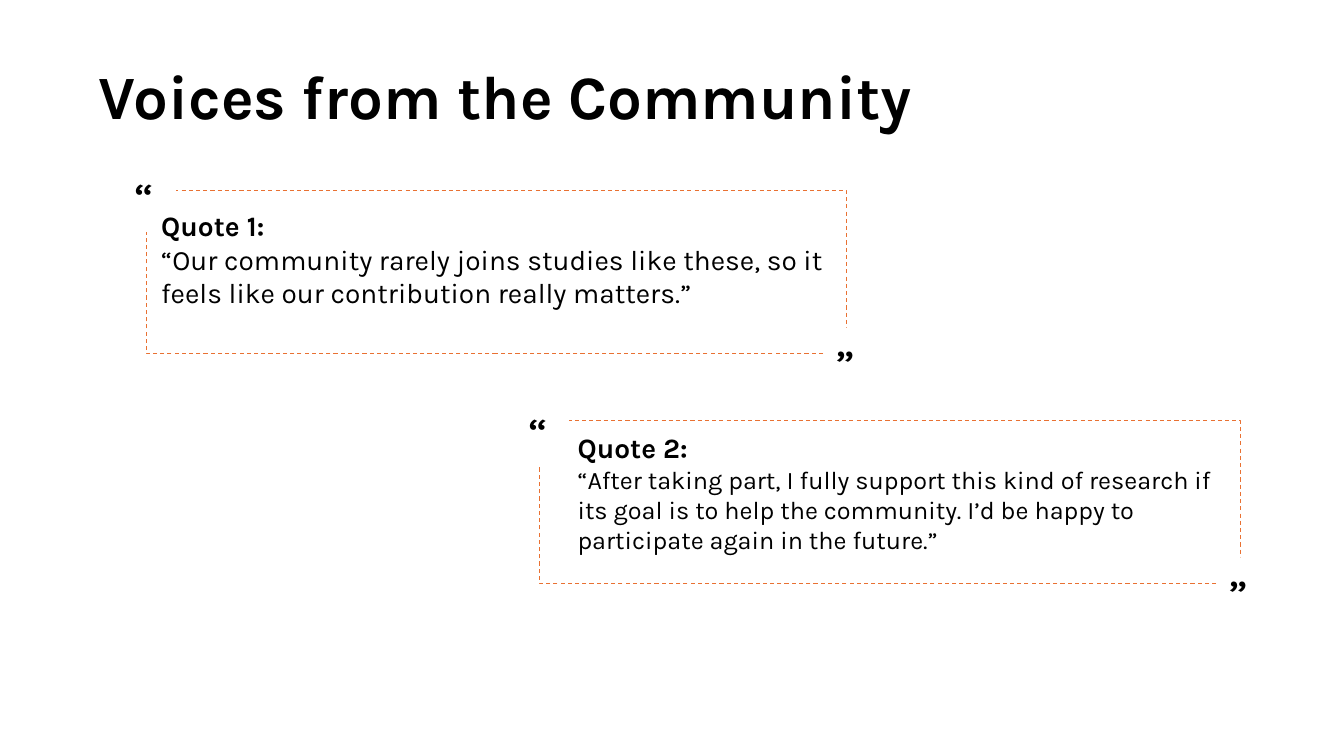
import pptx
import pptx.dml.color
import pptx.enum.dml
import pptx.enum.shapes
import pptx.enum.text
import pptx.util

Inches = pptx.util.Inches
Pt = pptx.util.Pt
RECT = pptx.enum.shapes.MSO_SHAPE.RECTANGLE
COLORS = {"ink": "000000", "paper": "FFFFFF", "accent": "E97132"}


class Deck:
    font = "Karla"

    def __init__(self):
        self.prs = pptx.Presentation()
        self.prs.slide_width = Inches(13.33)
        self.prs.slide_height = Inches(7.5)
        self.slide = self.prs.slides.add_slide(self.prs.slide_layouts[5])

    def color(self, name):
        return pptx.dml.color.RGBColor.from_string(COLORS[name])

    def label(self, shape, lines, middle=False):
        """Fill a shape with lines of (text, size, bold)."""
        frame = shape.text_frame
        frame.text = "\n".join(text for text, _, _ in lines)
        frame.word_wrap = True
        frame.auto_size = pptx.enum.text.MSO_AUTO_SIZE.NONE
        anchor = pptx.enum.text.MSO_ANCHOR
        frame.vertical_anchor = anchor.MIDDLE if middle else anchor.TOP
        for par, (_, size, bold) in zip(frame.paragraphs, lines):
            par.alignment = pptx.enum.text.PP_ALIGN.LEFT
            for run in par.runs:
                run.font.name = self.font
                run.font.size = Pt(size)
                run.font.bold = bold
                run.font.color.rgb = self.color("ink")

    def title(self, text, box):
        shape = self.slide.shapes.title
        shape.left, shape.top, shape.width, shape.height = map(Inches, box)
        self.label(shape, [(text, 44, True)])

    def text(self, lines, box):
        shape = self.slide.shapes.add_textbox(*map(Inches, box))
        self.label(shape, lines)

    def rect(self, box, fill=None, line=None):
        shape = self.slide.shapes.add_shape(RECT, *map(Inches, box))
        shape.shadow.inherit = False
        if fill:
            shape.fill.solid()
            shape.fill.fore_color.rgb = self.color(fill)
        else:
            shape.fill.background()
        if line:
            shape.line.color.rgb = self.color(line)
            shape.line.width = Pt(0.75)
        else:
            shape.line.fill.background()
        return shape

    def frame(self, left, top):
        shape = self.rect((left, top, 6.95, 1.62), line="accent")
        shape.line.dash_style = pptx.enum.dml.MSO_LINE.DASH

    def mark(self, sign, box, line=None):
        shape = self.rect(box, fill="paper", line=line)
        self.label(shape, [(sign, 36, False)], middle=True)

    def quote(self, left, top, rise, lines, box):
        """Dashed frame, broken at two corners by quotation marks."""
        self.frame(left, top)
        self.mark("“", (left - 0.21, top - rise, 0.5, 0.71), line="paper")
        self.mark("”", (left + 6.74, top + 1.36, 0.37, 0.71))
        self.text(lines, box)


def main():
    deck = Deck()

    # Heading
    deck.title("Voices from the Community", (0.88, 0.52, 10.03, 0.84))

    # Upper quote
    deck.quote(1.45, 1.89, 0.3, [
        ("Quote 1:", 20, True),
        ("“Our community rarely joins studies like these, so it feels like "
         "our contribution really matters.”", 20, False),
    ], (1.5, 2.02, 7.13, 1.45))

    # Lower quote
    deck.quote(5.35, 4.17, 0.25, [
        ("Quote 2:", 20, True),
        ("“After taking part, I fully support this kind of research if its "
         "goal is to help the community. I’d be happy to participate again "
         "in the future.”", 18, False),
    ], (5.63, 4.22, 6.67, 1.65))

    deck.prs.save("out.pptx")


if __name__ == "__main__":
    main()
